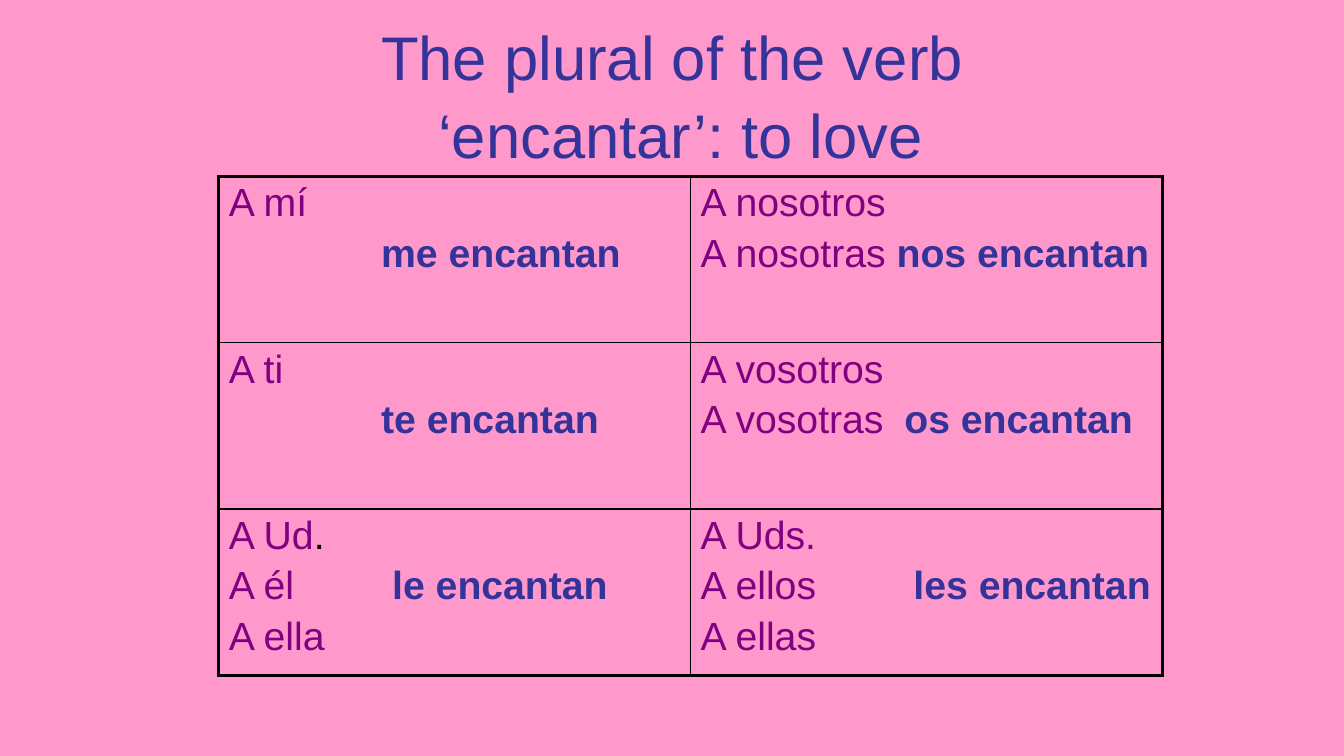
from pptx import Presentation
from pptx.dml.color import RGBColor as RGB
from pptx.enum.text import MSO_ANCHOR as Anchor, MSO_AUTO_SIZE as AutoSize, PP_ALIGN as Align
from pptx.oxml.ns import qn
from pptx.util import Inches, Pt
from lxml.etree import SubElement

COLORS = {"bg": "FF99CC", "title": "333399", "verb": "333399",
          "pronoun": "800080", "line": "000000"}

# Each cell is a list of lines, each line a list of (text, style) runs;
# a tab moves the verb to the cell's tab stop.
TITLE = "The plural of the verb\v ‘encantar’: to love"
CELLS = [
    [(1.51, [[("A mí", "pronoun")], [("\tme encantan", "verb")]]),
     (None, [[("A nosotros", "pronoun")],
             [("A nosotras ", "pronoun"), ("nos encantan", "verb")]])],
    [(1.51, [[("A ti", "pronoun")], [("\tte encantan", "verb")]]),
     (2.02, [[("A vosotros", "pronoun")],
             [("A vosotras", "pronoun"), ("\tos encantan", "verb")]])],
    [(1.62, [[("A Ud", "pronoun"), (".", "line")],
             [("A él", "pronoun"), ("\tle encantan", "verb")],
             [("A ella", "pronoun")]]),
     (2.11, [[("A Uds.", "pronoun")],
             [("A ellos", "pronoun"), ("\tles encantan", "verb")],
             [("A ellas", "pronoun")]])],
]


class SlideBuilder:
    font = "Arial"
    outer, inner = 2.25, 1

    def __init__(self, prs):
        self.s = prs.slides.add_slide(prs.slide_layouts[5])
        fill = self.s.background.fill
        fill.solid()
        fill.fore_color.rgb = RGB.from_string(COLORS["bg"])

    def style(self, font, color, size, bold=False):
        for name, value in {"name": self.font, "size": Pt(size), "bold": bold}.items():
            setattr(font, name, value)
        font.color.rgb = RGB.from_string(COLORS[color])

    def title(self, text, left, top, width, height):
        sp = self.s.shapes.title
        box = {"left": left, "top": top, "width": width, "height": height}
        for name, value in box.items():
            setattr(sp, name, Inches(value))
        tf = sp.text_frame
        frame = {"text": text, "word_wrap": True, "auto_size": AutoSize.NONE,
                 "vertical_anchor": Anchor.MIDDLE}
        for name, value in frame.items():
            setattr(tf, name, value)
        p = tf.paragraphs[0]
        p.alignment = Align.CENTER
        p.line_spacing = 1.05
        for r in p.runs:
            self.style(r.font, "title", 44)

    def table(self, rows, left, top, col_width, row_height):
        n_rows, n_cols = len(rows), len(rows[0])
        tbl = self.s.shapes.add_table(
            n_rows, n_cols, Inches(left), Inches(top),
            Inches(col_width * n_cols), Inches(row_height * n_rows)).table
        tbl.first_row = tbl.horz_banding = False
        for col in tbl.columns:
            col.width = Inches(col_width)
        for row in tbl.rows:
            row.height = Inches(row_height)
        for i, row in enumerate(rows):
            for j, (tab, lines) in enumerate(row):
                cell = tbl.cell(i, j)
                self.borders(cell, {"L": j == 0, "R": j == n_cols - 1,
                                    "T": i == 0, "B": i == n_rows - 1})
                cell.fill.background()
                self.cell_text(cell.text_frame, lines, tab)

    def borders(self, cell, edges):
        tc_pr = cell._tc.get_or_add_tcPr()
        for side, is_outer in edges.items():
            width = Pt(self.outer if is_outer else self.inner)
            ln = SubElement(tc_pr, qn(f"a:ln{side}"), w=str(width))
            fill = SubElement(ln, qn("a:solidFill"))
            SubElement(fill, qn("a:srgbClr"), val=COLORS["line"])

    def cell_text(self, tf, lines, tab):
        for k, runs in enumerate(lines):
            p = tf.add_paragraph() if k else tf.paragraphs[0]
            p.space_before = Pt(4.7 if k else 0)
            if tab:
                tabs = SubElement(p._p.get_or_add_pPr(), qn("a:tabLst"))
                SubElement(tabs, qn("a:tab"), pos=str(Inches(tab)), algn="l")
            for text, kind in runs:
                r = p.add_run()
                r.text = text
                self.style(r.font, kind, 28, kind == "verb")


def main():
    prs = Presentation()
    prs.slide_width, prs.slide_height = Inches(13.33), Inches(7.5)
    slide = SlideBuilder(prs)
    # Heading
    slide.title(TITLE, 0.67, 0.3, 12, 1.25)
    # Pronoun and verb grid
    slide.table(CELLS, 2.17, 1.75, 4.68, 1.65)
    prs.save("out.pptx")


if __name__ == "__main__":
    main()
